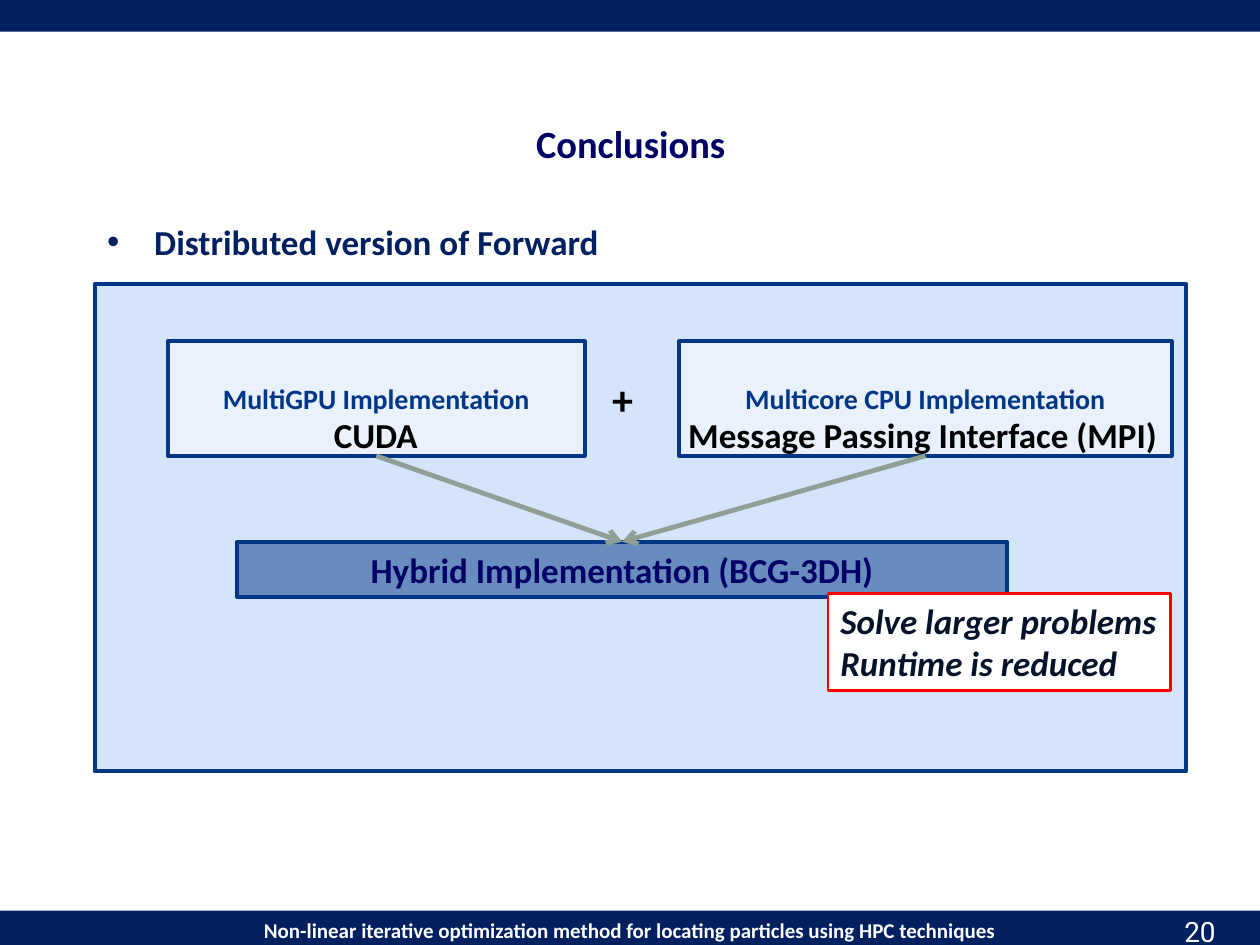
from dataclasses import dataclass

from lxml import etree
from pptx import Presentation
from pptx import util as u
from pptx.dml.color import RGBColor
from pptx.enum import shapes, text
from pptx.oxml.ns import qn


@dataclass(frozen=True)
class Theme:
    font: str = "Calibri"
    number_font: str = "Roboto"
    bar: str = "002060"
    frame: str = "003686"
    panel: str = "ABCAF7"
    heading: str = "000066"
    arrow: str = "8F9F96"
    alert: str = "FF0000"
    ink: str = "04132A"
    white: str = "FFFFFF"
    black: str = "000000"
    small: int = 12
    label: int = 16
    body: int = 20
    title: int = 22
    plus: int = 24


class Deck:
    def __init__(self, slide, theme):
        self.slide, self.theme = slide, theme

    def set_text(self, sp, lines, size, color, bold=True, italic=False,
                 font=None, align=text.PP_ALIGN.CENTER,
                 anchor=text.MSO_ANCHOR.TOP, wrap=True, top_inset=0.13):
        tf = sp.text_frame
        tf.text = lines
        tf.word_wrap = wrap
        tf.vertical_anchor = anchor
        tf.margin_top = u.Cm(top_inset)
        for p in tf.paragraphs:
            p.alignment = align
            for r in p.runs:
                r.font.name = font or self.theme.font
                r.font.size = u.Pt(size)
                r.font.bold, r.font.italic = bold, italic
                r.font.color.rgb = RGBColor.from_string(color)
        return sp

    def box(self, at, fill, line=None, width=2.25, alpha=None):
        sp = self.slide.shapes.add_shape(
            shapes.MSO_SHAPE.RECTANGLE, *map(u.Cm, at))
        sp.shadow.inherit = False
        sp.fill.solid()
        sp.fill.fore_color.rgb = RGBColor.from_string(fill)
        if alpha:
            clr = sp._element.spPr.find(qn("a:solidFill"))[0]
            etree.SubElement(clr, qn("a:alpha"), val=str(alpha * 1000))
        if line:
            sp.line.color.rgb = RGBColor.from_string(line)
            sp.line.width = u.Pt(width)
        else:
            sp.line.fill.background()
        return sp

    def label(self, at, lines, size, color, **style):
        sp = self.slide.shapes.add_textbox(*map(u.Cm, at))
        return self.set_text(sp, lines, size, color, **style)

    def bullet(self, at, line, size, color):
        sp = self.label(at, line, size, color, align=text.PP_ALIGN.JUSTIFY)
        pPr = sp.text_frame.paragraphs[0]._p.get_or_add_pPr()
        indent = u.Cm(0.95)
        pPr.set("marL", str(indent))
        pPr.set("indent", str(-indent))
        etree.SubElement(pPr, qn("a:buFont"), typeface="Arial")
        etree.SubElement(pPr, qn("a:buChar"), char="•")

    def arrow(self, start, end):
        """Joins the bottom of one box to the top of another."""
        cn = self.slide.shapes.add_connector(
            shapes.MSO_CONNECTOR.STRAIGHT, 0, 0, 0, 0)
        cn.begin_connect(start, 2)
        cn.end_connect(end, 0)
        cn.line.color.rgb = RGBColor.from_string(self.theme.arrow)
        cn.line.width = u.Pt(2.75)
        ln = cn._element.spPr.find(qn("a:ln"))
        etree.SubElement(ln, qn("a:tailEnd"), type="arrow")
        etree.SubElement(cn._element.spPr, qn("a:effectLst"))


def main():
    prs = Presentation()
    prs.slide_width, prs.slide_height = u.Cm(25.4), u.Cm(19.05)
    t = Theme()
    d = Deck(prs.slides.add_slide(prs.slide_layouts[6]), t)
    left, middle = text.PP_ALIGN.LEFT, text.MSO_ANCHOR.MIDDLE

    # Header and footer bars
    footer = d.box((0, 18.36, 25.4, 0.69), t.bar)
    d.set_text(footer, "Non-linear iterative optimization method for locating "
               "particles using HPC techniques", t.small, t.white)
    d.box((0, 0, 25.4, 0.64), t.bar)
    d.label((23.29, 18.31, 1.8, 0.81), "20", t.label, t.white,
            bold=False, font=t.number_font)

    # Title and bullet
    d.label((2.11, 2.34, 21.21, 1.07), "Conclusions", t.title, t.heading,
            anchor=middle)
    d.bullet((1.91, 4.32, 21.59, 1.2), "Distributed version of Forward",
             t.body, t.bar)

    # Panel and hybrid result
    d.box((1.91, 5.72, 22, 9.83), t.panel, t.frame, alpha=50)
    hybrid = d.box((4.78, 10.92, 15.52, 1.12), t.frame, t.frame, alpha=50)
    d.set_text(hybrid, "Hybrid Implementation (BCG-3DH)", t.body, t.heading,
               anchor=middle)

    # The two implementations, each pointing to the hybrid one
    sources = [
        (3.38, 8.41, "MultiGPU Implementation", "CUDA", 2.21),
        (13.69, 9.93, "Multicore CPU Implementation",
         "Message Passing Interface (MPI)", 10.06),
    ]
    for x, w, name, tool, tool_w in sources:
        sp = d.box((x, 6.88, w, 2.31), t.white, t.frame, alpha=50)
        d.set_text(sp, name, t.label, t.frame, top_inset=0.81)
        d.arrow(sp, hybrid)
        d.label((x + (w - tool_w) / 2, 8.2, tool_w, 1.12), tool, t.body,
                t.black, align=left, wrap=False)
    d.label((12.09, 7.39, 1.02, 1.27), "+", t.plus, t.black,
            align=left, wrap=False)

    # Benefits
    benefits = d.box((16.69, 11.96, 6.91, 1.96), t.white, t.alert, width=1.5)
    d.set_text(benefits, "Solve larger problems\nRuntime is reduced", t.body,
               t.ink, italic=True, align=left, wrap=False)

    prs.save("out.pptx")


if __name__ == "__main__":
    main()
